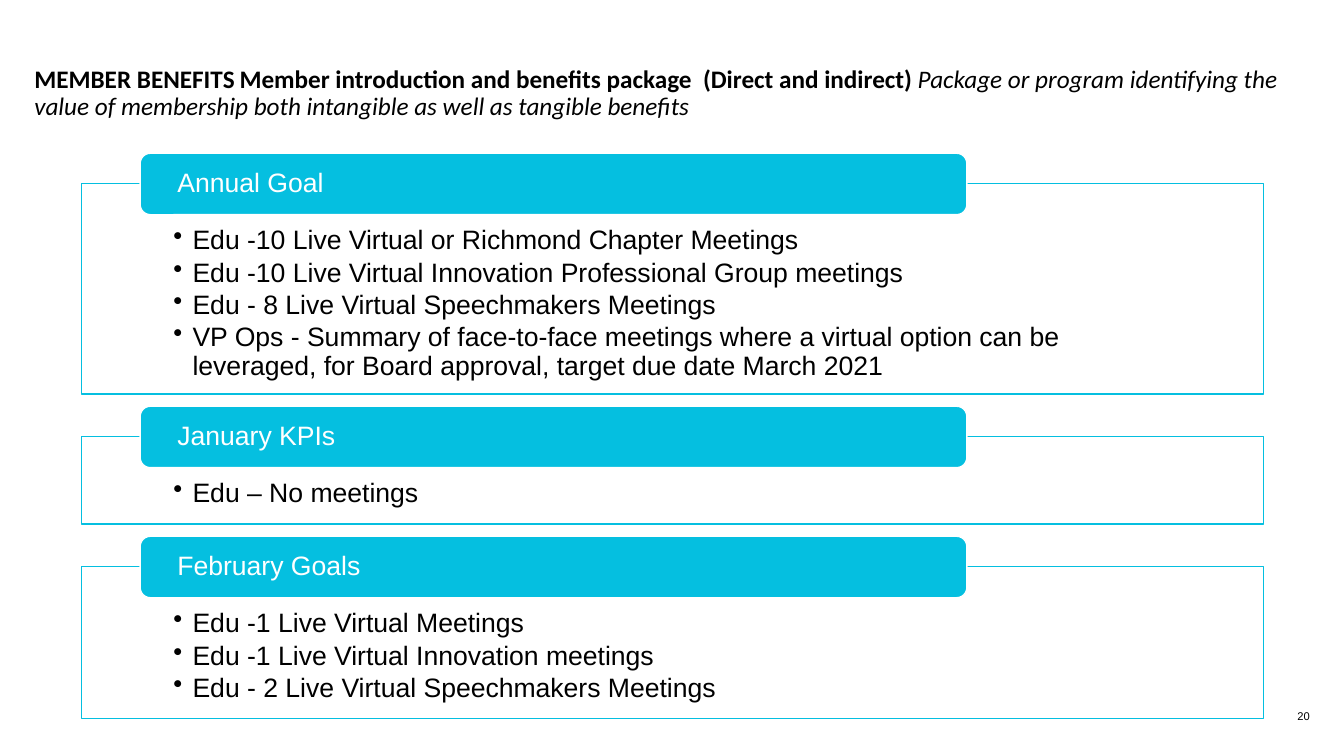
from lxml import etree
from pptx import Presentation
from pptx.dml.color import RGBColor
from pptx.enum.shapes import MSO_SHAPE
from pptx.enum.text import MSO_ANCHOR, PP_ALIGN
from pptx.oxml.ns import qn
from pptx.util import Inches, Pt

RECTANGLE, ROUNDED = MSO_SHAPE.RECTANGLE, MSO_SHAPE.ROUNDED_RECTANGLE
TOP, MIDDLE, BOTTOM = MSO_ANCHOR.TOP, MSO_ANCHOR.MIDDLE, MSO_ANCHOR.BOTTOM
LEFT, RIGHT = PP_ALIGN.LEFT, PP_ALIGN.RIGHT
TITLE_ONLY = 5
CYAN, WHITE, BLACK = "05BFE0", "FFFFFF", "000000"

# Text, size, font, bold, italic
TITLE_SPANS = [
    ("MEMBER BENEFITS", 18, "Calibri", True, False),
    (" ", 12, "Arial", False, False),
    ("Member introduction and benefits package  (Direct and indirect)", 18, "Calibri", True, False),
    (" ", 12, "Arial", False, False),
    ("Package or program identifying the value of membership both intangible "
     "as well as tangible benefits", 18, "Calibri", False, True),
]

# Heading, top of heading, height of panel, bullets
SECTIONS = [
    ("Annual Goal", 1.52, 2.09, [
        "Edu -10 Live Virtual or Richmond Chapter Meetings",
        "Edu -10 Live Virtual Innovation Professional Group meetings",
        "Edu - 8 Live Virtual Speechmakers Meetings",
        "VP Ops - Summary of face-to-face meetings where a virtual option can be "
        "leveraged, for Board approval, target due date March 2021",
    ]),
    ("January KPIs", 4.03, 0.87, ["Edu – No meetings"]),
    ("February Goals", 5.32, 1.51, [
        "Edu -1 Live Virtual Meetings",
        "Edu -1 Live Virtual Innovation meetings",
        "Edu - 2 Live Virtual Speechmakers Meetings",
    ]),
]


def color(value):
    return RGBColor.from_string(value)


def set_frame(frame, anchor, side=0, top=0, bottom=0):
    frame.word_wrap = True
    frame.vertical_anchor = anchor
    frame.margin_left = frame.margin_right = Inches(side)
    frame.margin_top, frame.margin_bottom = Inches(top), Inches(bottom)


def write(para, text, size, text_color, align=LEFT):
    para.text = text
    para.alignment = align
    para.line_spacing = 0.9
    para.font.size = Pt(size)
    para.font.name = "Arial"
    para.font.color.rgb = color(text_color)


def add_bullet(para):
    properties = para._p.get_or_add_pPr()
    properties.set("marL", str(Inches(0.19)))
    properties.set("indent", str(Inches(-0.19)))
    etree.SubElement(properties, qn("a:buChar"), char="•")


def add_box(page, kind, left, top, width, height, fill, line):
    box = page.shapes.add_shape(kind, Inches(left), Inches(top), Inches(width), Inches(height))
    box.shadow.inherit = False
    box.fill.solid()
    box.fill.fore_color.rgb = color(fill)
    box.line.color.rgb = color(line)
    box.line.width = Pt(1)
    return box


def add_section(page, heading, top, height, bullets):
    # Outlined panel with bullets
    panel = add_box(page, RECTANGLE, 0.81, top + 0.3, 11.72, height, WHITE, CYAN)
    frame = panel.text_frame
    set_frame(frame, TOP, side=0.91, top=0.43, bottom=0.15)
    for index, text in enumerate(bullets):
        para = frame.add_paragraph() if index else frame.paragraphs[0]
        add_bullet(para)
        write(para, text, 19, BLACK)
        para.space_after = Pt(2.5)

    # Heading over the panel's top edge
    header = add_box(page, ROUNDED, 1.39, top, 8.2, 0.61, CYAN, WHITE)
    set_frame(header.text_frame, MIDDLE, side=0.34)
    write(header.text_frame.paragraphs[0], heading, 19, WHITE)


def set_title(page):
    title = page.shapes.title
    title.left, title.top = Inches(0.34), Inches(0.36)
    title.width, title.height = Inches(12.64), Inches(1.15)
    set_frame(title.text_frame, MIDDLE)
    para = title.text_frame.paragraphs[0]
    para.alignment = LEFT
    para.line_spacing = 0.9
    for text, size, font, bold, italic in TITLE_SPANS:
        span = para.add_run()
        span.text = text
        span.font.size, span.font.name = Pt(size), font
        span.font.bold, span.font.italic = bold, italic
        span.font.color.rgb = color(BLACK)


def add_page_number(page, number):
    box = page.shapes.add_textbox(Inches(12.54), Inches(6.95), Inches(0.45), Inches(0.22))
    set_frame(box.text_frame, BOTTOM)
    write(box.text_frame.paragraphs[0], number, 8, BLACK, RIGHT)


def main():
    deck = Presentation()
    deck.slide_width, deck.slide_height = Inches(13.33), Inches(7.5)
    page = deck.slides.add_slide(deck.slide_layouts[TITLE_ONLY])
    set_title(page)
    for section in SECTIONS:
        add_section(page, *section)
    add_page_number(page, "20")
    deck.save("out.pptx")


if __name__ == "__main__":
    main()
